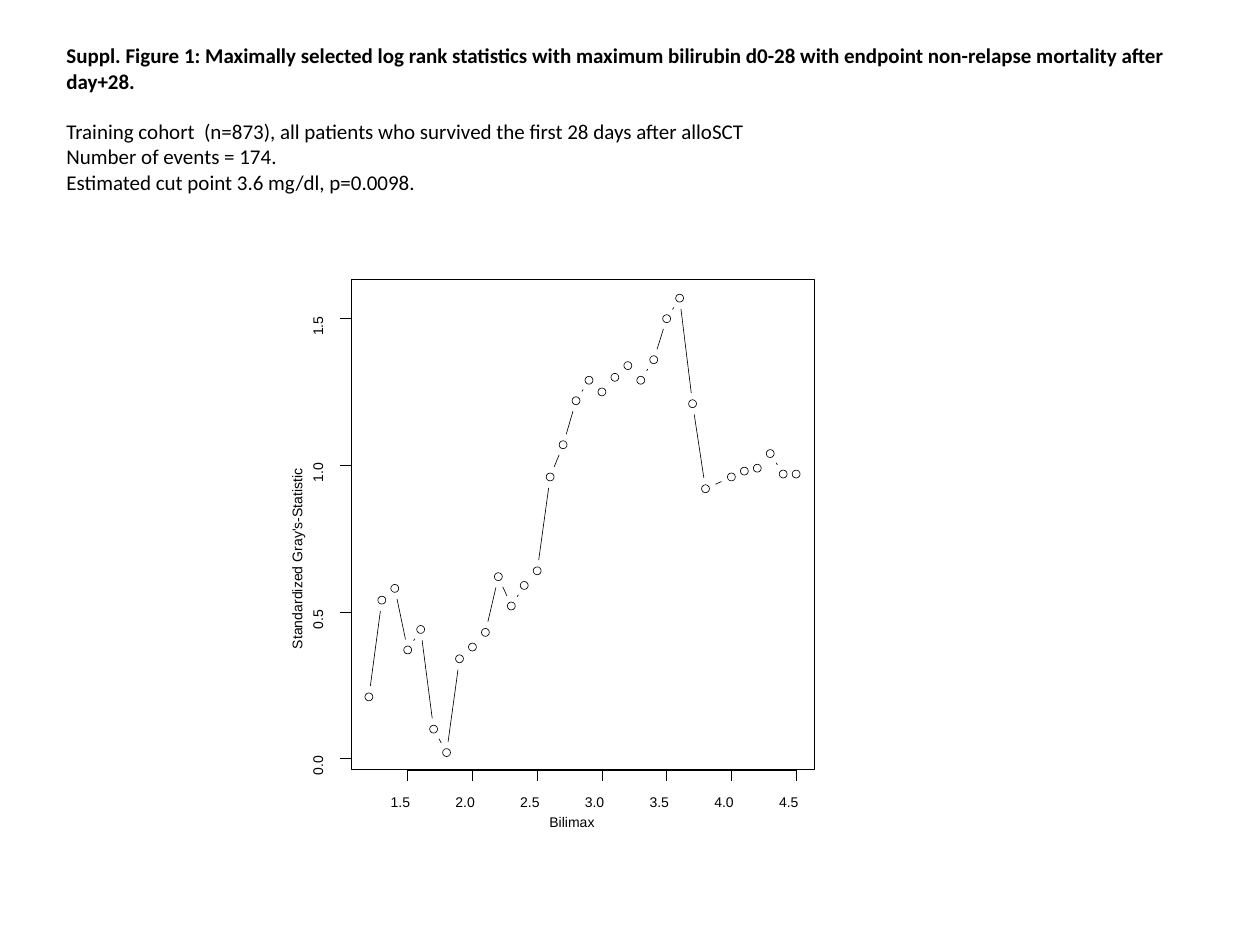
from dataclasses import dataclass
from math import hypot

from lxml import etree
from pptx import Presentation
from pptx.dml.color import RGBColor
from pptx.enum.shapes import MSO_CONNECTOR, MSO_SHAPE
from pptx.oxml.ns import qn
from pptx.shapes.group import GroupShape
from pptx.text.text import TextFrame
from pptx.util import Cm, Pt

STRAIGHT = MSO_CONNECTOR.STRAIGHT
ELLIPSE = MSO_SHAPE.OVAL
RECTANGLE = MSO_SHAPE.RECTANGLE

COLORS = {"ink": "000000"}
LINE_WIDTH = Pt(0.38)
MARKER_SIZE = 0.16
MARKER_GAP = 0.22
TICK_LENGTH = 0.23
LABEL_HEIGHT = 0.51
TICK_LABEL_WIDTH = 0.69


@dataclass(frozen=True)
class Scale:
    anchor_value: float
    anchor_position: float
    step: float

    def place(self, value: float) -> float:
        return self.anchor_position + (value - self.anchor_value) * self.step


@dataclass(frozen=True)
class Box:
    left: float
    top: float
    width: float
    height: float

    @property
    def bottom(self) -> float:
        return self.top + self.height


@dataclass(frozen=True)
class Label:
    text: str
    center_x: float
    center_y: float
    width: float
    rotation: float = 0


@dataclass(frozen=True)
class Caption:
    text: str
    bold: bool = False
    space_after: float = 0


BILIMAX_SCALE = Scale(1.5, 8.22, 2.61)
STATISTIC_SCALE = Scale(0, 15.29, -5.91)
FRAME = Box(7.09, 5.64, 9.32, 9.88)
BILIMAX_TICKS = [1.5 + 0.5 * index for index in range(7)]
STATISTIC_TICKS = [0.5 * index for index in range(4)]

BILIMAX = [tenths / 10 for tenths in range(12, 46) if tenths != 39]
STATISTICS = [
    0.21, 0.54, 0.58, 0.37, 0.44, 0.10, 0.02, 0.34, 0.38, 0.43, 0.62,
    0.52, 0.59, 0.64, 0.96, 1.07, 1.22, 1.29, 1.25, 1.30, 1.34, 1.29,
    1.36, 1.50, 1.57, 1.21, 0.92, 0.96, 0.98, 0.99, 1.04, 0.97, 0.97,
]

CAPTIONS = [
    Caption(
        "Suppl. Figure 1: Maximally selected log rank statistics with maximum bilirubin "
        "d0-28 with endpoint non-relapse mortality after day+28.",
        bold=True,
        space_after=14.6,
    ),
    Caption("Training cohort  (n=873), all patients who survived the first 28 days after alloSCT"),
    Caption("Number of events = 174."),
    Caption("Estimated cut point 3.6 mg/dl, p=0.0098."),
]

AXIS_TITLES = [
    Label("Bilimax", 11.76, 16.66, 1.37),
    Label("Standardized Gray's-Statistic", 6.07, 10.57, 5.03, 270),
]


def write_text(frame: TextFrame, text: str, *, font: str, size: float,
               bold: bool = False, space_after: float = 0, first: bool = True) -> None:
    para = frame.paragraphs[0] if first else frame.add_paragraph()
    para.space_after = Pt(space_after)
    span = para.add_run()
    span.text = text
    span.font.name = font
    span.font.size = Pt(size)
    span.font.bold = bold
    span.font.color.rgb = RGBColor.from_string(COLORS["ink"])


def draw_label(plot: GroupShape, label: Label) -> None:
    box = plot.shapes.add_textbox(
        Cm(label.center_x - label.width / 2), Cm(label.center_y - LABEL_HEIGHT / 2),
        Cm(label.width), Cm(LABEL_HEIGHT),
    )
    box.rotation = label.rotation
    frame = box.text_frame
    frame.word_wrap = True
    frame.margin_left = frame.margin_right = frame.margin_top = frame.margin_bottom = 0
    write_text(frame, label.text, font="Arial", size=8)


def draw_line(plot: GroupShape, start_x: float, start_y: float,
              end_x: float, end_y: float) -> None:
    line = plot.shapes.add_connector(STRAIGHT, Cm(start_x), Cm(start_y), Cm(end_x), Cm(end_y))
    line.line.color.rgb = RGBColor.from_string(COLORS["ink"])
    line.line.width = LINE_WIDTH
    etree.SubElement(line._element.spPr, qn("a:effectLst"))


def draw_outline(plot: GroupShape, kind: MSO_SHAPE, box: Box) -> None:
    shape = plot.shapes.add_shape(kind, Cm(box.left), Cm(box.top), Cm(box.width), Cm(box.height))
    shape.shadow.inherit = False
    shape.fill.background()
    shape.line.color.rgb = RGBColor.from_string(COLORS["ink"])
    shape.line.width = LINE_WIDTH


def draw_series(plot: GroupShape) -> None:
    points = [
        (BILIMAX_SCALE.place(bilimax), STATISTIC_SCALE.place(statistic))
        for bilimax, statistic in zip(BILIMAX, STATISTICS)
    ]
    for (start_x, start_y), (end_x, end_y) in zip(points, points[1:]):
        length = hypot(end_x - start_x, end_y - start_y)
        if length > 2 * MARKER_GAP:
            trim_x = (end_x - start_x) * MARKER_GAP / length
            trim_y = (end_y - start_y) * MARKER_GAP / length
            draw_line(plot, start_x + trim_x, start_y + trim_y, end_x - trim_x, end_y - trim_y)
    for x, y in points:
        marker = Box(x - MARKER_SIZE / 2, y - MARKER_SIZE / 2, MARKER_SIZE, MARKER_SIZE)
        draw_outline(plot, ELLIPSE, marker)


def draw_axes(plot: GroupShape) -> None:
    columns = [BILIMAX_SCALE.place(value) for value in BILIMAX_TICKS]
    draw_line(plot, columns[0], FRAME.bottom, columns[-1], FRAME.bottom)
    for value, x in zip(BILIMAX_TICKS, columns):
        draw_line(plot, x, FRAME.bottom, x, FRAME.bottom + TICK_LENGTH)
        draw_label(plot, Label(f"{value:.1f}", x, 16.26, TICK_LABEL_WIDTH))
    rows = [STATISTIC_SCALE.place(value) for value in STATISTIC_TICKS]
    draw_line(plot, FRAME.left, rows[0], FRAME.left, rows[-1])
    for value, y in zip(STATISTIC_TICKS, rows):
        draw_line(plot, FRAME.left, y, FRAME.left - TICK_LENGTH, y)
        draw_label(plot, Label(f"{value:.1f}", 6.49, y, TICK_LABEL_WIDTH, 270))


def main() -> None:
    deck = Presentation()
    deck.slide_width, deck.slide_height = Cm(25.4), Cm(19.05)
    page = deck.slides.add_slide(deck.slide_layouts[6])

    caption_box = page.shapes.add_textbox(Cm(1.09), Cm(0.74), Cm(23.24), Cm(3.33))
    caption_box.text_frame.word_wrap = True
    for index, caption in enumerate(CAPTIONS):
        write_text(caption_box.text_frame, caption.text, font="Calibri", size=12,
                   bold=caption.bold, space_after=caption.space_after, first=index == 0)

    plot = page.shapes.add_group_shape()
    draw_series(plot)
    draw_axes(plot)
    draw_outline(plot, RECTANGLE, FRAME)
    for title in AXIS_TITLES:
        draw_label(plot, title)

    deck.save("out.pptx")


if __name__ == "__main__":
    main()
